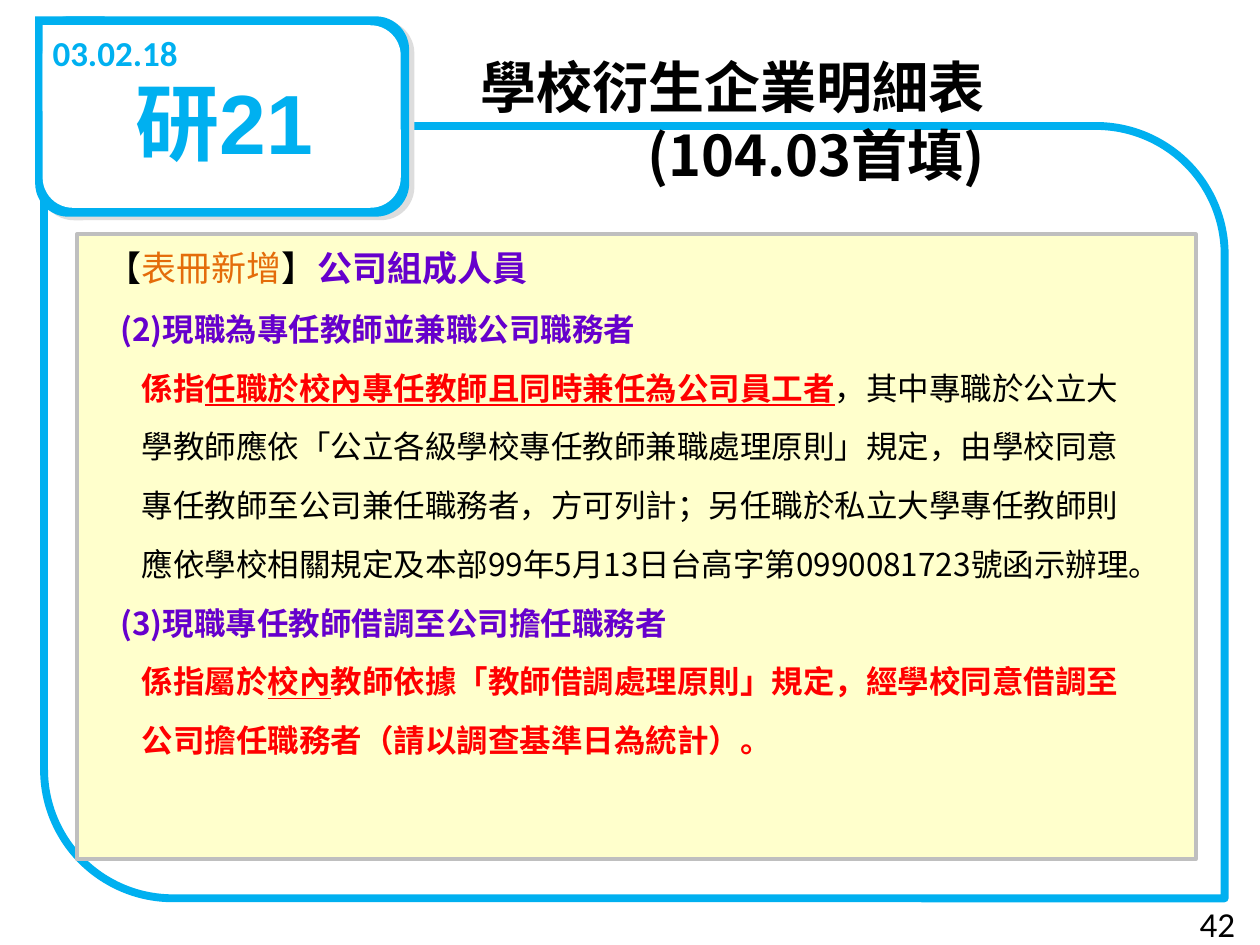
from dataclasses import dataclass

from lxml import etree
from pptx import Presentation
from pptx.dml.color import RGBColor
from pptx.enum.shapes import MSO_SHAPE
from pptx.enum.text import MSO_ANCHOR, PP_ALIGN
from pptx.oxml.ns import qn
from pptx.util import Cm, Pt

RECT = MSO_SHAPE.RECTANGLE
ROUNDED = MSO_SHAPE.ROUNDED_RECTANGLE
DIAGONAL = MSO_SHAPE.ROUND_2_DIAG_RECTANGLE
LEFT, CENTER, RIGHT = PP_ALIGN.LEFT, PP_ALIGN.CENTER, PP_ALIGN.RIGHT
TOP, MIDDLE = MSO_ANCHOR.TOP, MSO_ANCHOR.MIDDLE


@dataclass(frozen=True)
class Theme:
    blue: str = "00B0F0"
    white: str = "FFFFFF"
    black: str = "000000"
    cream: str = "FFFFCC"
    grey: str = "BFBFBF"
    shadow: str = "DDDDDD"
    orange: str = "E46C0A"
    purple: str = "6600CC"
    red: str = "FF0000"
    cjk: str = "Noto Sans CJK JP"
    latin: str = "Calibri"
    badge_font: str = "Arial"
    body: int = 18
    label: int = 20
    title: int = 32
    badge: int = 48


@dataclass(frozen=True)
class Run:
    text: str
    color: str
    bold: bool = False
    underline: bool = False


class SlideBuilder:
    def __init__(self, slide, theme):
        self.slide = slide
        self.theme = theme

    def shape(self, kind, box, fill=None, line=None, width=0):
        sp = self.slide.shapes.add_shape(kind, *map(Cm, box))
        sp.shadow.inherit = False
        if fill:
            sp.fill.solid()
            sp.fill.fore_color.rgb = RGBColor.from_string(fill)
        else:
            sp.fill.background()
        if line:
            sp.line.color.rgb = RGBColor.from_string(line)
            sp.line.width = Pt(width)
        else:
            sp.line.fill.background()
        return sp

    def hard_shadow(self, sp):
        effects = sp._element.spPr.find(qn("a:effectLst"))
        shadow = etree.SubElement(effects, qn("a:outerShdw"), blurRad="0",
                                  dist=str(Pt(3.6)), dir=str(34 * 60000), algn="ctr")
        etree.SubElement(shadow, qn("a:srgbClr"), val=self.theme.shadow)

    def badge_layer(self, box, corner, fill):
        """Rounded card whose top left corner is squared off."""
        card = self.shape(ROUNDED, box, fill)
        self.shape(RECT, (*box[:2], *corner), fill)
        return card

    def text(self, box, paragraphs, size, font, align=LEFT, anchor=TOP):
        """Add a text box; each paragraph is a list of runs."""
        tf = self.slide.shapes.add_textbox(*map(Cm, box)).text_frame
        tf.word_wrap = True
        tf.vertical_anchor = anchor
        for i, runs in enumerate(paragraphs):
            p = tf.add_paragraph() if i else tf.paragraphs[0]
            p.alignment = align
            for run in runs:
                r = p.add_run()
                r.text = run.text
                r.font.size = Pt(size)
                r.font.name = font
                r.font.bold = run.bold
                r.font.underline = run.underline
                r.font.color.rgb = RGBColor.from_string(run.color)
                etree.SubElement(r._r.get_or_add_rPr(), qn("a:ea"),
                                 typeface=self.theme.cjk)
        return tf

    def first_line_indent(self, p, indent):
        pPr = p._p.get_or_add_pPr()
        pPr.set("marL", "0")
        pPr.set("indent", str(Cm(indent)))


def body_paragraphs(t):
    """Return (first-line indent in cm, runs) for each paragraph."""
    head, line = 0.28, 0.71
    return [
        (0, [Run("【", t.black), Run("表冊新增", t.orange), Run("】", t.black),
             Run("公司組成人員", t.purple, True)]),
        (head, [Run("(2)現職為專任教師並兼職公司職務者", t.purple, True)]),
        (line, [Run("係指", t.red, True),
                Run("任職於校內專任教師且同時兼任為公司員工者", t.red, True, True),
                Run("，其中專職於公立大", t.black)]),
        (line, [Run("學教師應依「公立各級學校專任教師兼職處理原則」規定，由學校同意", t.black)]),
        (line, [Run("專任教師至公司兼任職務者，方可列計；另任職於私立大學專任教師則", t.black)]),
        (line, [Run("應依學校相關規定及本部99年5月13日台高字第0990081723號函示辦理。", t.black)]),
        (head, [Run("(3)現職專任教師借調至公司擔任職務者", t.purple, True)]),
        (line, [Run("係指屬於", t.red, True), Run("校內", t.red, True, True),
                Run("教師依據「教師借調處理原則」規定，經學校同意借調至", t.red, True)]),
        (line, [Run("公司擔任職務者（請以調查基準日為統計）。", t.red, True)]),
    ]


def main():
    prs = Presentation()
    prs.slide_width, prs.slide_height = Cm(25.4), Cm(19.05)
    t = Theme()
    b = SlideBuilder(prs.slides.add_slide(prs.slide_layouts[6]), t)

    frame = b.shape(DIAGONAL, (0.89, 2.54, 23.8, 15.57), line=t.blue, width=4.5)
    frame._element.spPr.find(qn("a:xfrm")).set("flipH", "1")

    card = b.badge_layer((0.71, 0.33, 7.54, 4.04), (1.4, 1.88), t.blue)
    b.hard_shadow(card)
    b.badge_layer((0.86, 0.51, 7.22, 3.68), (1.35, 1.73), t.white)
    b.text((0.81, 0.51, 3.28, 1.12), [[Run("03.02.18", t.blue, True)]], t.label, t.latin)
    b.text((0.81, 1.3, 7.42, 2.31), [[Run("研21", t.blue, True)]],
           t.badge, t.badge_font, CENTER)

    b.shape(RECT, (1.55, 4.72, 22.56, 12.6), t.cream, t.grey, 2)
    b.text((23.52, 18.11, 1.63, 1.02), [[Run("42", t.black)]],
           t.label, t.latin, RIGHT, MIDDLE)

    indents, paragraphs = zip(*body_paragraphs(t))
    tf = b.text((1.9, 4.85, 21.79, 10.69), paragraphs, t.body, t.cjk)
    for p, indent in zip(tf.paragraphs, indents):
        p.space_after = Pt(12)
        b.first_line_indent(p, indent)
    for r in tf.paragraphs[0].runs:
        r.font.size = Pt(t.label)

    b.text((8.71, 0.94, 11.4, 3), [[Run("學校衍生企業明細表", t.black, True)],
                                   [Run("(104.03首填)", t.black, True)]],
           t.title, t.cjk, RIGHT)
    prs.save("out.pptx")


if __name__ == "__main__":
    main()
